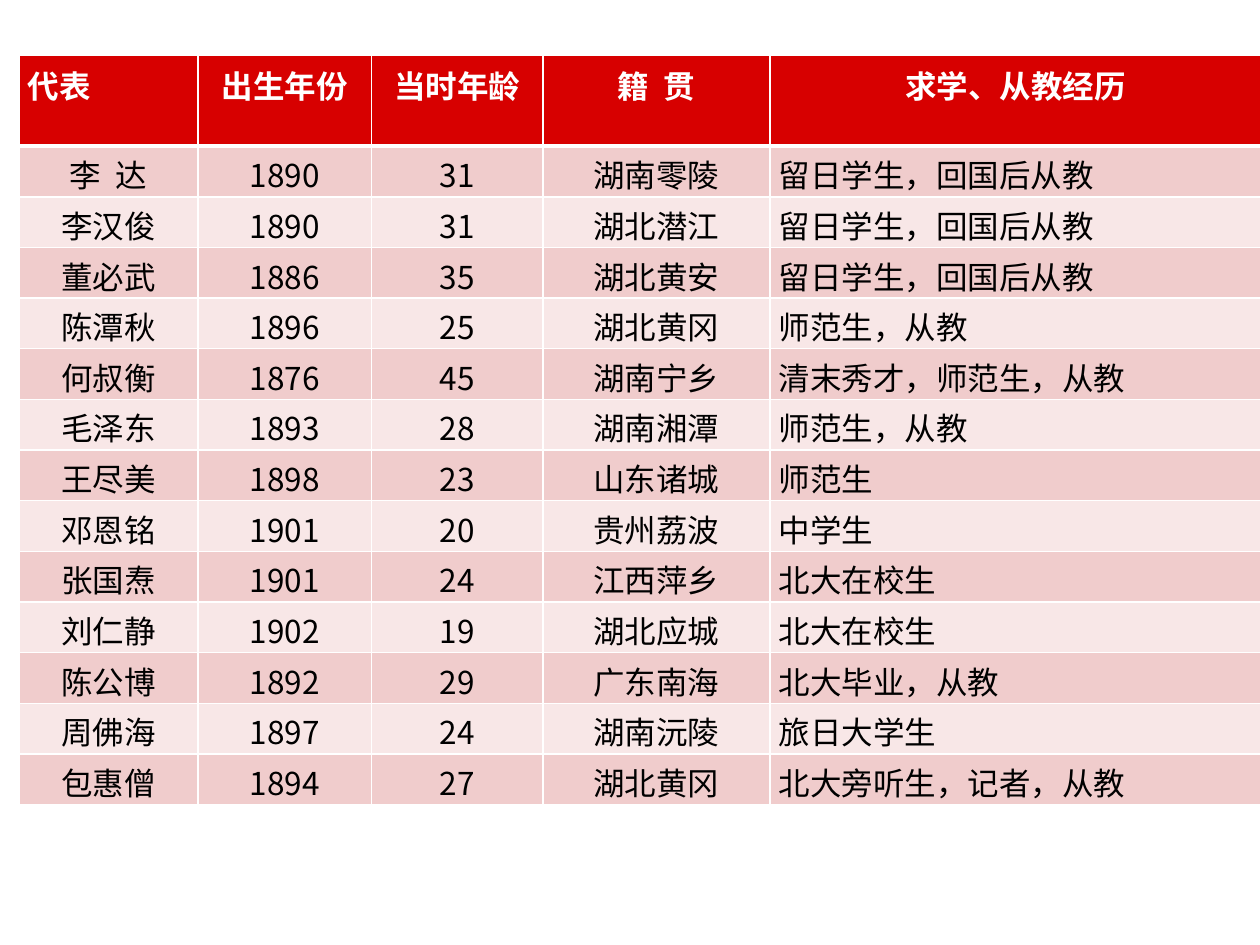
from dataclasses import dataclass

from lxml.etree import SubElement
from pptx import Presentation
from pptx.dml.color import RGBColor
from pptx.enum.text import PP_ALIGN
from pptx.oxml.ns import qn
from pptx.util import Inches, Pt


@dataclass(frozen=True)
class Theme:
    """Colours, type and line widths of the slide."""

    font: str = "Noto Sans CJK SC"
    text_size: int = 18
    header_fill: str = "D70000"
    header_text: str = "FFFFFF"
    body_text: str = "000000"
    band_fills: tuple = ("F0CCCC", "F8E7E7")
    border: str = "FFFFFF"
    thin_line: int = 1
    thick_line: int = 3


HEADERS = ("代表", "出生年份", "当时年龄", "籍  贯", "求学、从教经历")
DELEGATES = (
    ("李  达", "1890", "31", "湖南零陵", "留日学生，回国后从教"),
    ("李汉俊", "1890", "31", "湖北潜江", "留日学生，回国后从教"),
    ("董必武", "1886", "35", "湖北黄安", "留日学生，回国后从教"),
    ("陈潭秋", "1896", "25", "湖北黄冈", "师范生，从教"),
    ("何叔衡", "1876", "45", "湖南宁乡", "清末秀才，师范生，从教"),
    ("毛泽东", "1893", "28", "湖南湘潭", "师范生，从教"),
    ("王尽美", "1898", "23", "山东诸城", "师范生"),
    ("邓恩铭", "1901", "20", "贵州荔波", "中学生"),
    ("张国焘", "1901", "24", "江西萍乡", "北大在校生"),
    ("刘仁静", "1902", "19", "湖北应城", "北大在校生"),
    ("陈公博", "1892", "29", "广东南海", "北大毕业，从教"),
    ("周佛海", "1897", "24", "湖南沅陵", "旅日大学生"),
    ("包惠僧", "1894", "27", "湖北黄冈", "北大旁听生，记者，从教"),
)
COLUMN_WIDTHS = (1.42, 1.38, 1.36, 1.8, 3.9)
HEADER_HEIGHT, BODY_HEIGHT = 0.72, 0.4
HEADER_ALIGNMENTS = (PP_ALIGN.JUSTIFY,) + (PP_ALIGN.CENTER,) * 4
BODY_ALIGNMENTS = (PP_ALIGN.CENTER,) * 4 + (PP_ALIGN.LEFT,)


class SlideBuilder:
    """Holds the theme and the current slide."""

    def __init__(self, slide, theme):
        self.slide = slide
        self.theme = theme

    def add_table(self, left, top, headers, records):
        """Add a banded table with a header row."""
        rows = (headers, *records)
        heights = [HEADER_HEIGHT] + [BODY_HEIGHT] * len(records)
        table = self.slide.shapes.add_table(
            len(rows), len(headers), Inches(left), Inches(top),
            Inches(sum(COLUMN_WIDTHS)), Inches(sum(heights)),
        ).table
        for column, width in zip(table.columns, COLUMN_WIDTHS):
            column.width = Inches(width)
        for row, height in zip(table.rows, heights):
            row.height = Inches(height)
        for row_index, values in enumerate(rows):
            for column_index, value in enumerate(values):
                cell = table.cell(row_index, column_index)
                self.set_borders(cell, row_index)
                self.set_cell(cell, value, row_index, column_index)

    def set_cell(self, cell, value, row_index, column_index):
        """Fill one cell and format its text."""
        theme = self.theme
        is_header = row_index == 0
        fill = theme.header_fill if is_header else theme.band_fills[(row_index - 1) % 2]
        cell.fill.solid()
        cell.fill.fore_color.rgb = RGBColor.from_string(fill)
        cell.margin_left = cell.margin_right = Inches(0.07)
        cell.margin_top = Inches(0.05 if is_header else 0.04)
        cell.margin_bottom = Inches(0.05 if is_header else 0)
        cell.text_frame.text = value
        paragraph = cell.text_frame.paragraphs[0]
        alignments = HEADER_ALIGNMENTS if is_header else BODY_ALIGNMENTS
        paragraph.alignment = alignments[column_index]
        for run in paragraph.runs:
            font = run.font
            font.name = theme.font
            font.size = Pt(theme.text_size)
            font.bold = is_header
            color = theme.header_text if is_header else theme.body_text
            font.color.rgb = RGBColor.from_string(color)
            SubElement(font._element, qn("a:ea"), typeface=theme.font)

    def set_borders(self, cell, row_index):
        """Draw the cell borders, thick between header and body."""
        theme = self.theme
        widths = {
            "a:lnL": theme.thin_line,
            "a:lnR": theme.thin_line,
            "a:lnT": theme.thick_line if row_index == 1 else theme.thin_line,
            "a:lnB": theme.thick_line if row_index == 0 else theme.thin_line,
        }
        properties = cell._tc.get_or_add_tcPr()
        for tag, width in widths.items():
            line = SubElement(properties, qn(tag), w=str(Pt(width)))
            fill = SubElement(line, qn("a:solidFill"))
            SubElement(fill, qn("a:srgbClr"), val=theme.border)


def main():
    """Build the slide and save it."""
    presentation = Presentation()
    presentation.slide_width = Inches(10)
    presentation.slide_height = Inches(7.5)
    slide = presentation.slides.add_slide(presentation.slide_layouts[6])
    SlideBuilder(slide, Theme()).add_table(0.15, 0.44, HEADERS, DELEGATES)
    presentation.save("out.pptx")


if __name__ == "__main__":
    main()
